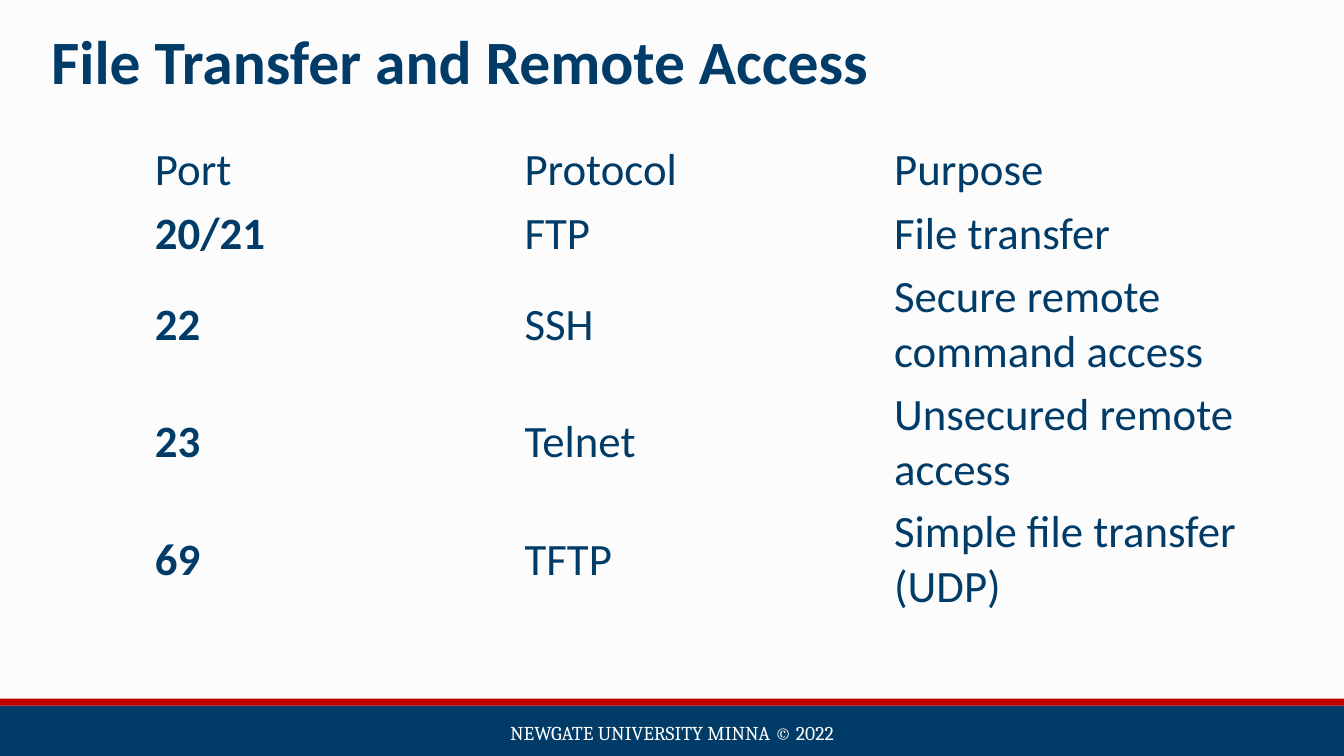
from dataclasses import dataclass

from pptx import Presentation
from pptx.dml.color import RGBColor
from pptx.enum.shapes import MSO_SHAPE
from pptx.enum.text import MSO_ANCHOR, PP_ALIGN
from pptx.oxml.ns import qn
from pptx.util import Pt


@dataclass(frozen=True)
class Theme:
    background: RGBColor = RGBColor.from_string("FCFCFC")
    navy: RGBColor = RGBColor.from_string("013C68")
    red: RGBColor = RGBColor.from_string("C00000")
    white: RGBColor = RGBColor.from_string("FFFFFF")
    body_font: str = "Calibri"
    footer_font: str = "Cambria"
    title_size: int = 44
    table_size: int = 32
    footer_size: int = 14


theme = Theme()
SLIDE_WIDTH, SLIDE_HEIGHT = 960, 540
NO_STYLE_NO_GRID = "{2D5ABB26-0587-4C30-8999-92F81FD0307C}"


def write_text(frame, text, *, size, color=theme.navy, font=theme.body_font,
               bold=False, align=PP_ALIGN.LEFT):
    frame.word_wrap = True
    paragraph = frame.paragraphs[0]
    paragraph.alignment = align
    run = paragraph.add_run()
    run.text = text
    run.font.name = font
    run.font.size = Pt(size)
    run.font.bold = bold
    run.font.color.rgb = color


presentation = Presentation()
presentation.slide_width = Pt(SLIDE_WIDTH)
presentation.slide_height = Pt(SLIDE_HEIGHT)
slide = presentation.slides.add_slide(presentation.slide_layouts[6])
slide.background.fill.solid()
slide.background.fill.fore_color.rgb = theme.background

# Footer bands
for top, height, color in [(504, 36, theme.navy), (499, 5, theme.red)]:
    band = slide.shapes.add_shape(
        MSO_SHAPE.RECTANGLE, Pt(0), Pt(top), Pt(SLIDE_WIDTH), Pt(height))
    band.shadow.inherit = False
    band.fill.solid()
    band.fill.fore_color.rgb = color
    band.line.fill.background()

# Footer and title text
footer = slide.shapes.add_textbox(Pt(290), Pt(508.5), Pt(380), Pt(29))
footer.text_frame.vertical_anchor = MSO_ANCHOR.MIDDLE
write_text(footer.text_frame, "NEWGATE UNIVERSITY MINNA ©️ 2022",
           size=theme.footer_size, color=theme.white,
           font=theme.footer_font, align=PP_ALIGN.CENTER)

title = slide.shapes.add_textbox(Pt(29.5), Pt(12.5), Pt(866), Pt(60.5))
title.text_frame.vertical_anchor = MSO_ANCHOR.MIDDLE
write_text(title.text_frame, "File Transfer and Remote Access",
           size=theme.title_size, bold=True)

# Port table
ONE_LINE, TWO_LINES = 45.7, 84
port_rows = [
    (ONE_LINE, "Port", "Protocol", "Purpose"),
    (ONE_LINE, "20/21", "FTP", "File transfer"),
    (TWO_LINES, "22", "SSH", "Secure remote command access"),
    (TWO_LINES, "23", "Telnet", "Unsecured remote access"),
    (TWO_LINES, "69", "TFTP", "Simple file transfer (UDP)"),
]
table_height = sum(height for height, *_ in port_rows)
table = slide.shapes.add_table(
    len(port_rows), 3, Pt(103.5), Pt(98.6), Pt(792), Pt(table_height)).table
table.first_row = False
table.horz_banding = False
table._tbl.tblPr.find(qn("a:tableStyleId")).text = NO_STYLE_NO_GRID

for column in table.columns:
    column.width = Pt(264)

for row_index, (height, *texts) in enumerate(port_rows):
    table.rows[row_index].height = Pt(height)
    for column_index, text in enumerate(texts):
        cell = table.cell(row_index, column_index)
        cell.fill.background()
        cell.vertical_anchor = MSO_ANCHOR.MIDDLE
        cell.margin_top = cell.margin_bottom = Pt(3)
        write_text(cell.text_frame, text, size=theme.table_size,
                   bold=row_index > 0 and column_index == 0)

presentation.save("out.pptx")
